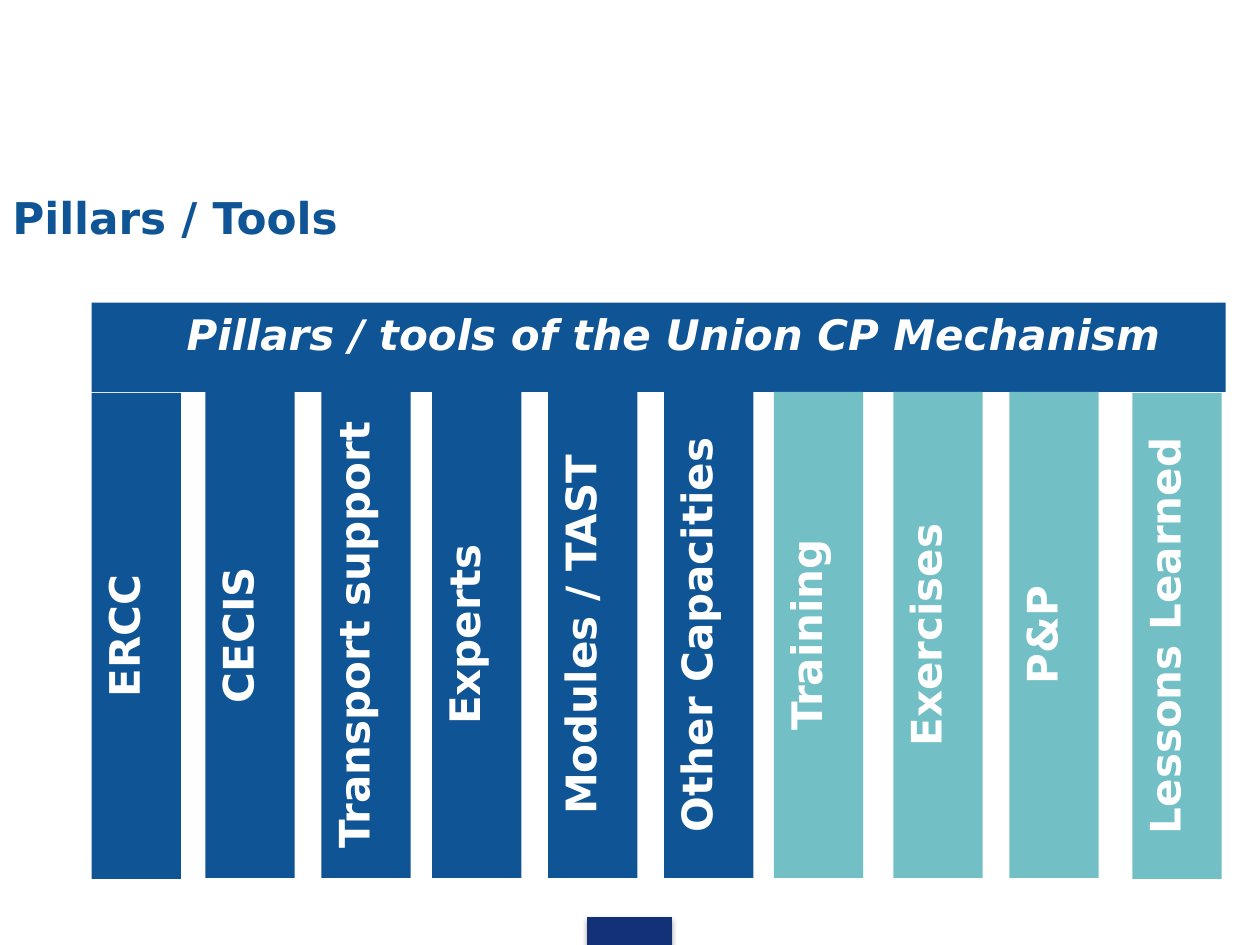
from dataclasses import dataclass

from lxml import etree
from pptx import Presentation
from pptx import util as u
from pptx.dml.color import RGBColor
from pptx.enum import shapes, text
from pptx.oxml.ns import qn

FONT = "DejaVu Sans"
BLUE, TEAL, NAVY, WHITE = "0F5494", "72BFC5", "133176", "FFFFFF"
PILLAR_TOP, PILLAR_W, PILLAR_H = 7.9, 1.8, 9.8


@dataclass
class Pillar:
    label: str
    left: float
    color: str
    top: float = PILLAR_TOP


PILLARS = [
    Pillar("ERCC", 1.85, BLUE, 7.92),
    Pillar("CECIS", 4.14, BLUE),
    Pillar("Transport support", 6.48, BLUE),
    Pillar("Experts", 8.71, BLUE),
    Pillar("Modules / TAST", 11.05, BLUE),
    Pillar("Other Capacities", 13.39, BLUE),
    Pillar("Training", 15.6, TEAL),
    Pillar("Exercises", 18.01, TEAL),
    Pillar("P&P", 20.35, TEAL),
    Pillar("Lessons Learned", 22.83, TEAL, 7.92),
]


def rgb(value: str) -> RGBColor:
    return RGBColor.from_string(value)


def add_rect(s, left: float, top: float, width: float, height: float, color: str):
    sp = s.shapes.add_shape(shapes.MSO_SHAPE.RECTANGLE, u.Cm(left), u.Cm(top),
                            u.Cm(width), u.Cm(height))
    sp.shadow.inherit = False
    sp.fill.solid()
    sp.fill.fore_color.rgb = rgb(color)
    sp.line.fill.background()
    return sp


def write(sp, label: str, size: float, color: str, align, anchor, italic=False):
    tf = sp.text_frame
    tf.word_wrap = True
    tf.vertical_anchor = anchor
    p = tf.paragraphs[0]
    p.alignment = align
    r = p.add_run()
    r.text = label
    r.font.name = FONT
    r.font.size = u.Pt(size)
    r.font.bold = True
    r.font.italic = italic
    r.font.color.rgb = rgb(color)
    return tf


def add_soft_shadow(sp) -> None:
    effects = sp._element.spPr.find(qn("a:effectLst"))
    shadow = etree.SubElement(effects, qn("a:outerShdw"), blurRad=str(u.Pt(3.1)),
                              dist=str(u.Pt(1.8)), dir="5400000", rotWithShape="0")
    color = etree.SubElement(shadow, qn("a:srgbClr"), val="000000")
    etree.SubElement(color, qn("a:alpha"), val="35000")


def add_pillar(s, pillar: Pillar) -> None:
    sp = add_rect(s, pillar.left, pillar.top, PILLAR_W, PILLAR_H, pillar.color)
    tf = write(sp, pillar.label, 24, WHITE, text.PP_ALIGN.CENTER, text.MSO_ANCHOR.TOP)
    tf._txBody.bodyPr.set("vert", "vert270")


def main() -> None:
    prs = Presentation()
    prs.slide_width, prs.slide_height = u.Cm(25.4), u.Cm(19.05)
    s = prs.slides.add_slide(prs.slide_layouts[6])

    # Footer tab
    tab = add_rect(s, 11.84, 18.49, 1.7, 0.56, NAVY)
    tab.line.color.rgb = rgb(NAVY)
    tab.line.width = u.Pt(0.75)
    add_soft_shadow(tab)

    # Heading
    heading = s.shapes.add_textbox(u.Cm(0), u.Cm(3.71), u.Cm(25.4), u.Cm(1.32))
    write(heading, "Pillars / Tools", 25, BLUE, text.PP_ALIGN.LEFT, text.MSO_ANCHOR.MIDDLE)

    # Banner, with its text set slightly right of centre
    banner = add_rect(s, 1.85, 6.1, 22.86, 1.8, BLUE)
    tf = write(banner, "Pillars / tools of the Union CP Mechanism", 24, WHITE,
               text.PP_ALIGN.CENTER, text.MSO_ANCHOR.TOP, italic=True)
    tf.margin_left = u.Cm(0.84)

    # Pillars under the banner
    for pillar in PILLARS:
        add_pillar(s, pillar)

    prs.save("out.pptx")


if __name__ == "__main__":
    main()
